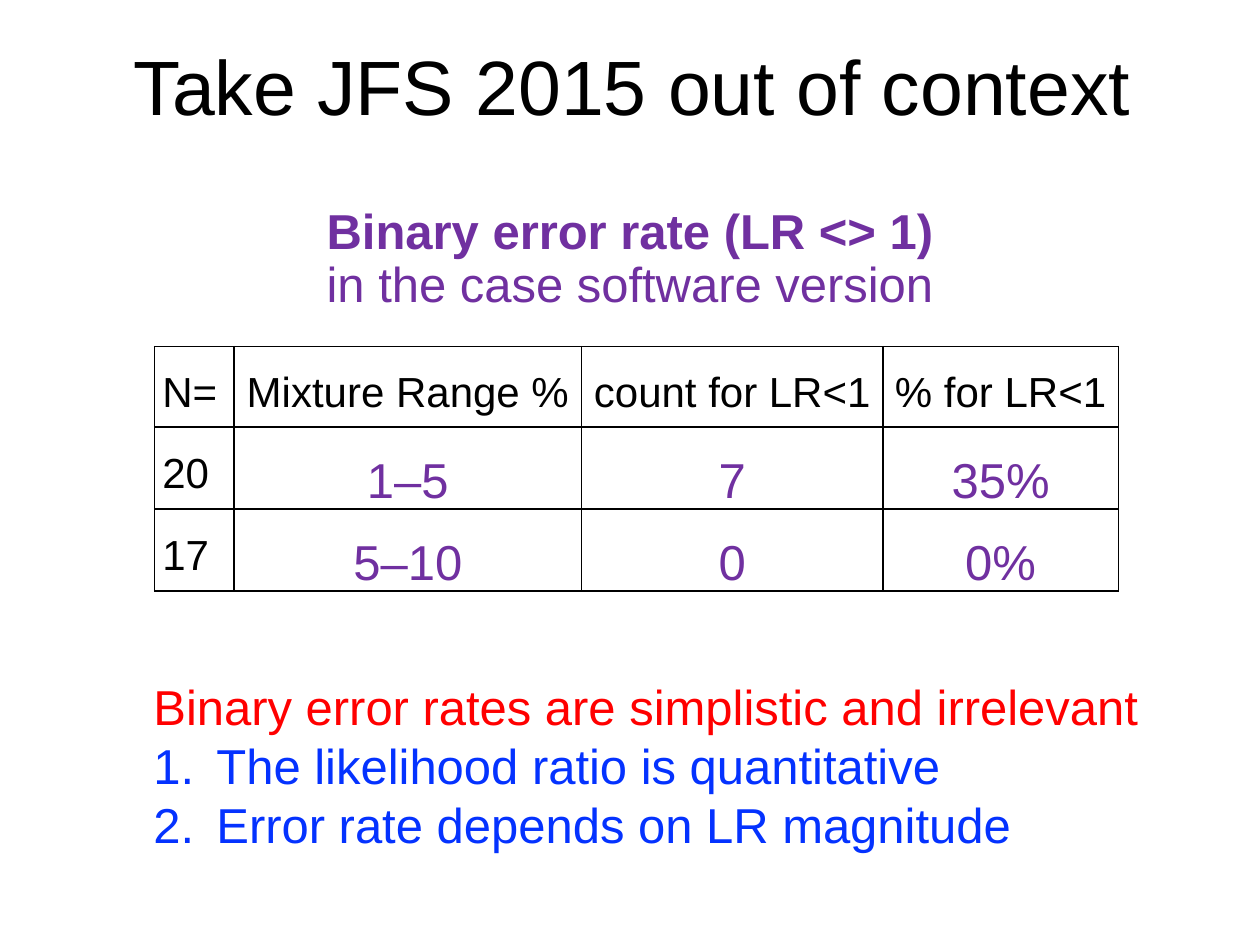
import pptx
import pptx.dml.color
import pptx.enum.text
import pptx.oxml
import pptx.oxml.ns
import pptx.util
from dataclasses import dataclass

Pt = pptx.util.Pt
Align = pptx.enum.text.PP_ALIGN
Anchor = pptx.enum.text.MSO_ANCHOR
Fit = pptx.enum.text.MSO_AUTO_SIZE


@dataclass(frozen=True)
class Theme:
    font: str = "Arial"
    black: str = "000000"
    purple: str = "7030A0"
    red: str = "FF0000"
    blue: str = "0432FF"
    title: int = 44
    body: int = 28
    label: int = 24


def write(para, text, font, size, color, bold=False, align=Align.LEFT, space=1.0):
    para.alignment = align
    para.line_spacing = space
    run = para.add_run()
    run.text = text
    run.font.name = font
    run.font.size = Pt(size)
    run.font.bold = bold
    run.font.color.rgb = pptx.dml.color.RGBColor.from_string(color)


def node(tag, attrs="", inner=""):
    space = pptx.oxml.ns.nsdecls("a")
    return pptx.oxml.parse_xml(f"<a:{tag} {space} {attrs}>{inner}</a:{tag}>")


class Deck:
    """Hold the theme and the current slide, and add elements to it."""

    def __init__(self, theme):
        self.theme = theme
        self.file = pptx.Presentation()
        self.file.slide_width, self.file.slide_height = Pt(720), Pt(540)
        self.slide = self.file.slides.add_slide(self.file.slide_layouts[5])

    def fill(self, frame, lines, **form):
        for i, (text, extra) in enumerate(lines):
            para = frame.add_paragraph() if i else frame.paragraphs[0]
            write(para, text, self.theme.font, **{**form, **extra})

    def title(self, text, box):
        shape = self.slide.shapes.title
        shape.left, shape.top, shape.width, shape.height = map(Pt, box)
        frame = shape.text_frame
        frame.auto_size = Fit.NONE
        frame.vertical_anchor = Anchor.MIDDLE
        self.fill(frame, [(text, {})], size=self.theme.title,
                  color=self.theme.black, align=Align.CENTER, space=0.9)

    def text(self, lines, box, anchor=Anchor.TOP, wrap=True, **form):
        frame = self.slide.shapes.add_textbox(*map(Pt, box)).text_frame
        frame.word_wrap = wrap
        frame.auto_size = Fit.NONE if wrap else Fit.SHAPE_TO_FIT_TEXT
        frame.vertical_anchor = anchor
        self.fill(frame, lines, size=self.theme.body, **form)
        return frame

    def number(self, paras, indent):
        for para in paras:
            props = para._p.get_or_add_pPr()
            props.set("marL", str(Pt(indent)))
            props.set("indent", str(-Pt(indent)))
            props.append(node("buFont", 'typeface="+mj-lt"'))
            props.append(node("buAutoNum", 'type="arabicPeriod"'))

    def border(self, cell):
        props = cell._tc.get_or_add_tcPr()
        ink = f'<a:solidFill><a:srgbClr val="{self.theme.black}"/></a:solidFill>'
        for i, side in enumerate(("lnL", "lnR", "lnT", "lnB")):
            props.insert(i, node(side, f'w="{Pt(1)}"', ink))

    def table(self, rows, box, widths, heights):
        shape = self.slide.shapes.add_table(len(rows), len(widths), *map(Pt, box))
        grid = shape.table
        grid.first_row = grid.horz_banding = False
        for col, width in zip(grid.columns, widths):
            col.width = Pt(width)
        for row, height in zip(grid.rows, heights):
            row.height = Pt(height)
        shape.height = Pt(box[3])
        for r, row in enumerate(rows):
            for c, text in enumerate(row):
                self.cell(grid.cell(r, c), text, value=r > 0 and c > 0,
                          align=Align.CENTER if c else Align.LEFT)

    def cell(self, cell, text, value, align):
        theme = self.theme
        cell.fill.background()
        cell.margin_left = cell.margin_right = Pt(4.5)
        cell.margin_top = cell.margin_bottom = 0
        cell.vertical_anchor = Anchor.MIDDLE if value else Anchor.TOP
        self.fill(cell.text_frame, [(text, {})], align=align, space=1.5,
                  size=theme.body if value else theme.label,
                  color=theme.purple if value else theme.black)
        self.border(cell)


def main():
    theme = Theme()
    deck = Deck(theme)
    deck.title("Take JFS 2015 out of context", (41.8, 20.9, 639.4, 61.2))
    deck.text([("Binary error rate (LR <> 1)", {"bold": True}),
               ("in the case software version", {})],
              (80.6, 114.5, 558.7, 68.4), anchor=Anchor.MIDDLE,
              color=theme.purple, align=Align.CENTER, space=0.9)
    deck.table([("N=", "Mixture Range %", "count for LR<1", "% for LR<1"),
                ("20", "1–5", "7", "35%"),
                ("17", "5–10", "0", "0%")],
               (88.3, 198, 550.8, 134.6),
               widths=(45.4, 198.7, 172.1, 134.6), heights=(46, 38, 38))
    notes = deck.text([("Binary error rates are simplistic and irrelevant",
                        {"color": theme.red}),
                       ("The likelihood ratio is quantitative", {}),
                       ("Error rate depends on LR magnitude", {})],
                      (80.6, 383, 584.6, 108.7), wrap=False, color=theme.blue)
    deck.number(notes.paragraphs[1:], 36)
    deck.file.save("out.pptx")


if __name__ == "__main__":
    main()
